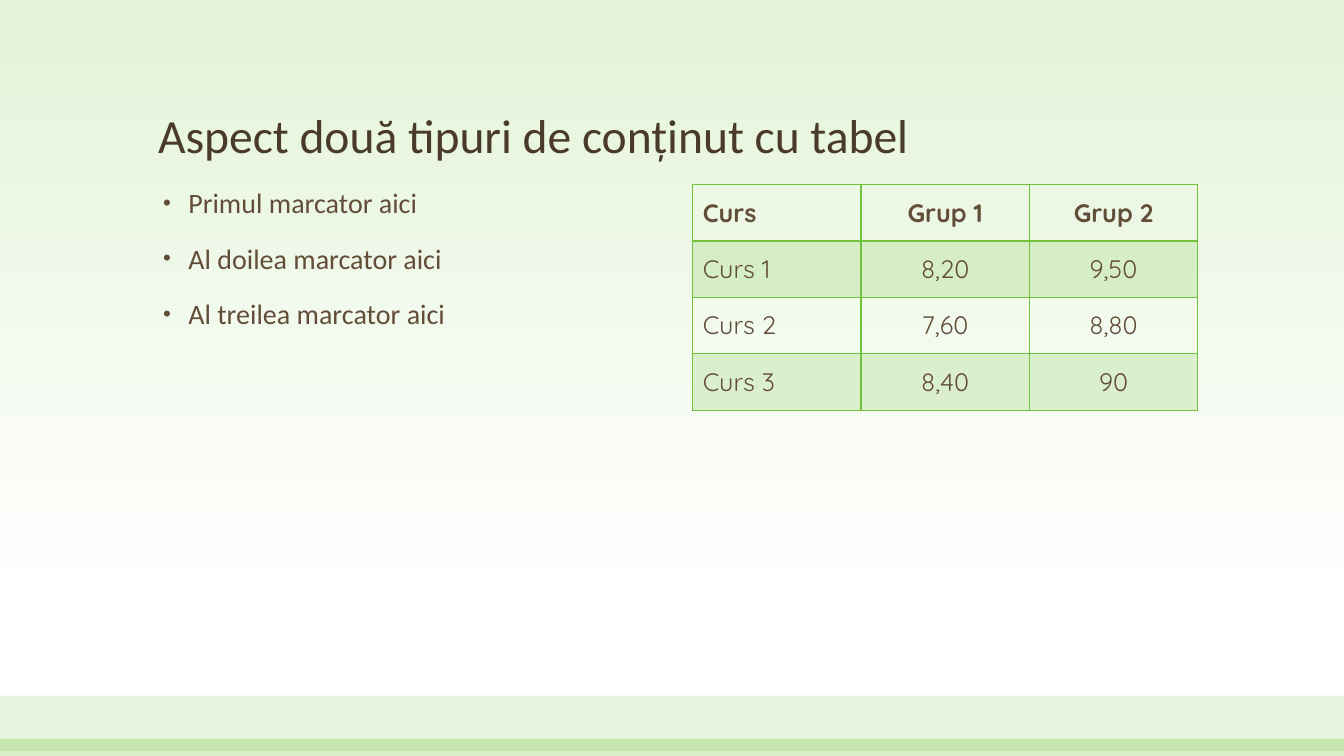
import dataclasses
import typing

import lxml.etree
import pptx
import pptx.dml.color
import pptx.enum.shapes
import pptx.enum.text
import pptx.oxml.ns
import pptx.util

SCALE = 9144
Align = pptx.enum.text.PP_ALIGN
Anchor = pptx.enum.text.MSO_ANCHOR


@dataclasses.dataclass(frozen=True)
class Theme:
    green: str = "72C23C"
    sky: str = "E3F3D8"
    white: str = "FFFFFF"
    dark: str = "4A3A2A"
    brown: str = "624D38"
    title: int = 34
    body: int = 20
    cell: int = 18
    font: str = "Calibri"
    grid: str = "Quicksand"


@dataclasses.dataclass(frozen=True)
class Box:
    left: int
    top: int
    width: int
    height: int

    def emu(self) -> list[int]:
        return [px(side) for side in dataclasses.astuple(self)]


@dataclasses.dataclass(frozen=True)
class Band:
    box: Box
    alpha: int


@dataclasses.dataclass(frozen=True)
class Type:
    font: str
    size: int
    color: str
    bold: bool = False


THEME = Theme()
WIDTH, HEIGHT = 1333, 750
BANDS = [
    Band(Box(0, 690, WIDTH, 55), 17),
    Band(Box(0, 733, WIDTH, 17), 28),
]
TITLE = "Aspect două tipuri de conținut cu tabel"
POINTS = ["Primul marcator aici", "Al doilea marcator aici", "Al treilea marcator aici"]
ROWS = [
    ["Curs", "Grup 1", "Grup 2"],
    ["Curs 1", "8,20", "9,50"],
    ["Curs 2", "7,60", "8,80"],
    ["Curs 3", "8,40", "90"],
]
GRID = Box(687, 183, 501, 224)


def px(count: int) -> int:
    return count * SCALE


def rgb(color: str) -> pptx.dml.color.RGBColor:
    return pptx.dml.color.RGBColor.from_string(color)


def add(parent: typing.Any, tag: str, **attrs: str) -> typing.Any:
    return lxml.etree.SubElement(parent, pptx.oxml.ns.qn(tag), attrs)


def tint(fill: typing.Any, holder: typing.Any, alpha: int) -> None:
    fill.solid()
    fill.fore_color.rgb = rgb(THEME.green)
    color = holder.find(pptx.oxml.ns.qn("a:solidFill"))[0]
    add(color, "a:alpha", val=str(alpha * 1000))


def write(para: typing.Any, text: str, style: Type) -> None:
    run = para.add_run()
    run.text = text
    run.font.name = style.font
    run.font.size = pptx.util.Pt(style.size)
    run.font.bold = style.bold
    run.font.color.rgb = rgb(style.color)


def paint(slide: typing.Any) -> None:
    fill = slide.background.fill
    fill.gradient()
    fill.gradient_angle = 270
    stops = [(0, THEME.sky), (0.79, THEME.white)]
    for stop, (place, color) in zip(fill.gradient_stops, stops):
        stop.position = place
        stop.color.rgb = rgb(color)


def draw_band(slide: typing.Any, band: Band) -> None:
    shape = slide.shapes.add_shape(
        pptx.enum.shapes.MSO_SHAPE.RECTANGLE, *band.box.emu()
    )
    shape.shadow.inherit = False
    shape.line.fill.background()
    tint(shape.fill, shape._element.spPr, band.alpha)


def add_frame(slide: typing.Any, box: Box, anchor: Anchor) -> typing.Any:
    frame = slide.shapes.add_textbox(*box.emu()).text_frame
    frame.word_wrap = True
    frame.vertical_anchor = anchor
    return frame


def draw_title(slide: typing.Any) -> None:
    para = add_frame(slide, Box(147, 48, 1040, 119), Anchor.BOTTOM).paragraphs[0]
    para.line_spacing = 0.9
    write(para, TITLE, Type(THEME.font, THEME.title, THEME.dark))


def draw_list(slide: typing.Any) -> None:
    frame = add_frame(slide, Box(147, 183, 500, 475), Anchor.TOP)
    for rank, point in enumerate(POINTS):
        para = frame.add_paragraph() if rank else frame.paragraphs[0]
        para.line_spacing = 0.9
        para.space_before = pptx.util.Pt(18)
        props = para._p.get_or_add_pPr()
        props.set("marL", str(px(30)))
        props.set("indent", str(px(-25)))
        add(props, "a:buSzPct", val="80000")
        add(props, "a:buFont", typeface="Arial")
        add(props, "a:buChar", char="•")
        write(para, point, Type(THEME.font, THEME.body, THEME.brown))


def edge(cell: typing.Any, row: int) -> None:
    props = cell._tc.get_or_add_tcPr()
    heavy = {(0, "B"), (1, "T")}
    for rank, side in enumerate("LRTB"):
        points = 2 if (row, side) in heavy else 1
        line = add(props, f"a:ln{side}", w=str(pptx.util.Pt(points)))
        add(add(line, "a:solidFill"), "a:srgbClr", val=THEME.green)
        props.insert(rank, line)


def draw_table(slide: typing.Any) -> None:
    count, span = len(ROWS), len(ROWS[0])
    table = slide.shapes.add_table(count, span, *GRID.emu()).table
    table.first_row = table.horz_banding = False
    for column in table.columns:
        column.width = px(GRID.width // span)
    for row, texts in enumerate(ROWS):
        table.rows[row].height = px(GRID.height // count)
        style = Type(THEME.grid, THEME.cell, THEME.brown, row == 0)
        for col, text in enumerate(texts):
            cell = table.cell(row, col)
            cell.vertical_anchor = Anchor.MIDDLE
            if row % 2:
                tint(cell.fill, cell._tc.tcPr, 20)
            else:
                cell.fill.background()
            edge(cell, row)
            para = cell.text_frame.paragraphs[0]
            para.alignment = Align.CENTER if col else Align.LEFT
            write(para, text, style)


def main() -> None:
    deck = pptx.Presentation()
    deck.slide_width, deck.slide_height = px(WIDTH), px(HEIGHT)
    slide = deck.slides.add_slide(deck.slide_layouts[6])
    paint(slide)
    for band in BANDS:
        draw_band(slide, band)
    draw_title(slide)
    draw_table(slide)
    draw_list(slide)
    deck.save("out.pptx")


if __name__ == "__main__":
    main()
